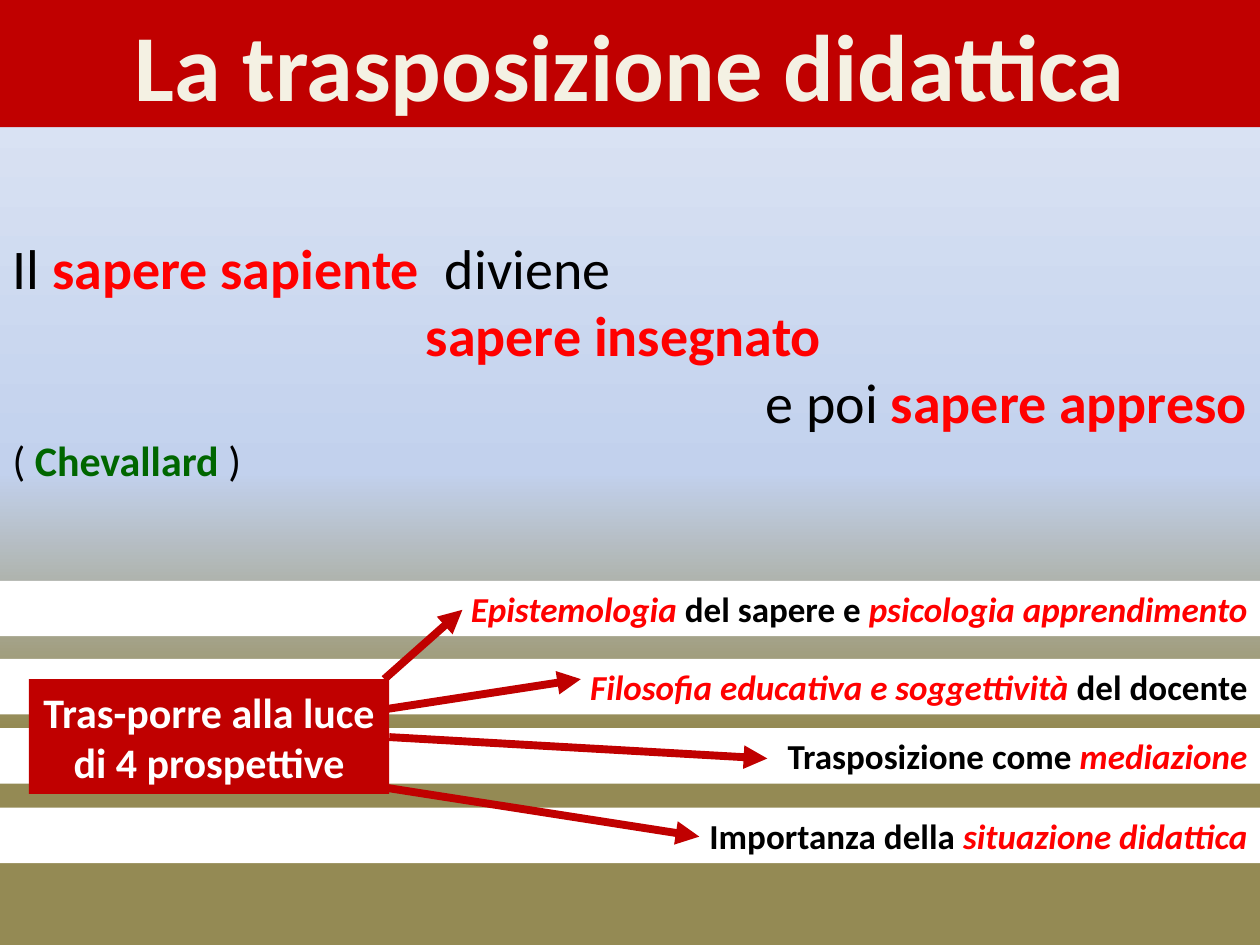
from copy import deepcopy
from pptx import Presentation
from pptx.dml.color import RGBColor as RGB
from pptx.enum.shapes import MSO_CONNECTOR as CONN, MSO_SHAPE as SHAPE
from pptx.enum.text import MSO_ANCHOR as ANCHOR, MSO_AUTO_SIZE as AUTO, PP_ALIGN as AL
from pptx.oxml.ns import qn
from pptx.util import Inches, Pt

C = {"dark_red": "C00000", "red": "FF0000", "green": "006600", "black": "000000",
     "white": "FFFFFF", "cream": "F4F1E3", "olive": "948A54", "blue": "C2D1ED", "pale": "E1E8F5"}

# Run formats
PLAIN = {"color": "black", "bold": False}
KEY = {"color": "red", "bold": True}
NAME = {"color": "green", "bold": True}
STRONG = {"color": "black", "bold": True}
ACCENT = {"color": "red", "bold": True, "italic": True}
LABEL = {"color": "white", "bold": True}


def write(sp, lines):
    """Fill a shape with lines of (alignment, size, runs)."""
    tf = sp.text_frame
    for name, value in {"word_wrap": True, "auto_size": AUTO.NONE,
                        "vertical_anchor": ANCHOR.MIDDLE}.items():
        setattr(tf, name, value)
    for i, (align, size, runs) in enumerate(lines):
        p = tf.paragraphs[0] if i == 0 else tf.add_paragraph()
        p.alignment, p.space_before = align, Pt(0)
        for text, fmt in runs:
            r = p.add_run()
            r.text = text
            for name, value in {"name": "Calibri", "size": Pt(size), **fmt}.items():
                if name == "color":
                    r.font.color.rgb = RGB.from_string(C[value])
                else:
                    setattr(r.font, name, value)


def add_box(shapes, place, color, lines):
    sp = shapes.add_shape(SHAPE.RECTANGLE, *map(Inches, place))
    sp.shadow.inherit = False
    sp.fill.solid()
    sp.fill.fore_color.rgb = RGB.from_string(C[color])
    sp.line.fill.background()
    write(sp, lines)


prs = Presentation()
W, H = 10, 7.5
prs.slide_width, prs.slide_height = Inches(W), Inches(H)
s = prs.slides.add_slide(prs.slide_layouts[1])

# Background gradient, rising from olive to pale blue
fill = s.background.fill
fill.gradient()
fill.gradient_angle = 90
stops = s.element.find(".//" + qn("a:gsLst"))
stops.append(deepcopy(stops[0]))
for stop, (pos, color) in zip(fill.gradient_stops, [(0.23, "olive"), (0.5, "blue"), (1, "pale")]):
    stop.position = pos
    stop.color.rgb = RGB.from_string(C[color])

# Title banner and body text
title, body = s.shapes.title, s.placeholders[1]
for sp, top, height in [(title, 0, 1.01), (body, 1.8, 2.12)]:
    sp.left, sp.top, sp.width, sp.height = map(Inches, (0, top, W, height))
title.fill.solid()
title.fill.fore_color.rgb = RGB.from_string(C["dark_red"])
write(title, [(AL.CENTER, 54, [("La trasposizione didattica", {"color": "cream", "bold": True})])])
write(body, [
    (AL.LEFT, 32, [("Il ", PLAIN), ("sapere sapiente  ", KEY), ("diviene", PLAIN)]),
    (AL.CENTER, 32, [("sapere insegnato ", KEY)]),
    (AL.RIGHT, 32, [("e poi ", PLAIN), ("sapere appreso", KEY)]),
    (AL.LEFT, 24, [("( ", PLAIN), ("Chevallard ", NAME), (")", PLAIN)]),
])
body.text_frame.vertical_anchor = ANCHOR.TOP
for p in body.text_frame.paragraphs:
    pPr = p._p.get_or_add_pPr()
    pPr.set("marL", "0")
    pPr.set("indent", "0")
    pPr.append(pPr.makeelement(qn("a:buNone"), {}))

# Four perspectives: band top, runs, arrow start and end
perspectives = [
    (4.61, [("Epistemologia", ACCENT), (" del sapere e ", STRONG),
            ("psicologia apprendimento", ACCENT)], (3.05, 5.39, 3.67, 4.84)),
    (5.23, [("Filosofia educativa e soggettività ", ACCENT), ("del docente", STRONG)],
     (3.05, 5.63, 4.61, 5.39)),
    (5.78, [("Trasposizione come ", STRONG), ("mediazione", ACCENT)], (3.09, 5.85, 6.09, 6.02)),
    (6.41, [("Importanza della ", STRONG), ("situazione didattica", ACCENT)],
     (3.05, 6.25, 5.55, 6.64)),
]
group = s.shapes.add_group_shape().shapes
for top, runs, _ in perspectives:
    add_box(group, (0, top, W, 0.44), "white", [(AL.RIGHT, 20, runs)])
add_box(group, (0.23, 5.39, 2.86, 0.91), "dark_red",
        [(AL.CENTER, 24, [(text, LABEL)]) for text in ("Tras-porre alla luce", "di 4 prospettive")])

# Arrows from the label to each perspective
for _, _, ends in perspectives:
    arrow = group.add_connector(CONN.STRAIGHT, *map(Inches, ends))
    arrow.line.color.rgb = RGB.from_string(C["dark_red"])
    arrow.line.width = Pt(4.5)
    ln = arrow.line._get_or_add_ln()
    ln.append(ln.makeelement(qn("a:tailEnd"), {"type": "triangle"}))
    spPr = arrow._element.spPr
    spPr.append(spPr.makeelement(qn("a:effectLst"), {}))

prs.save("out.pptx")
